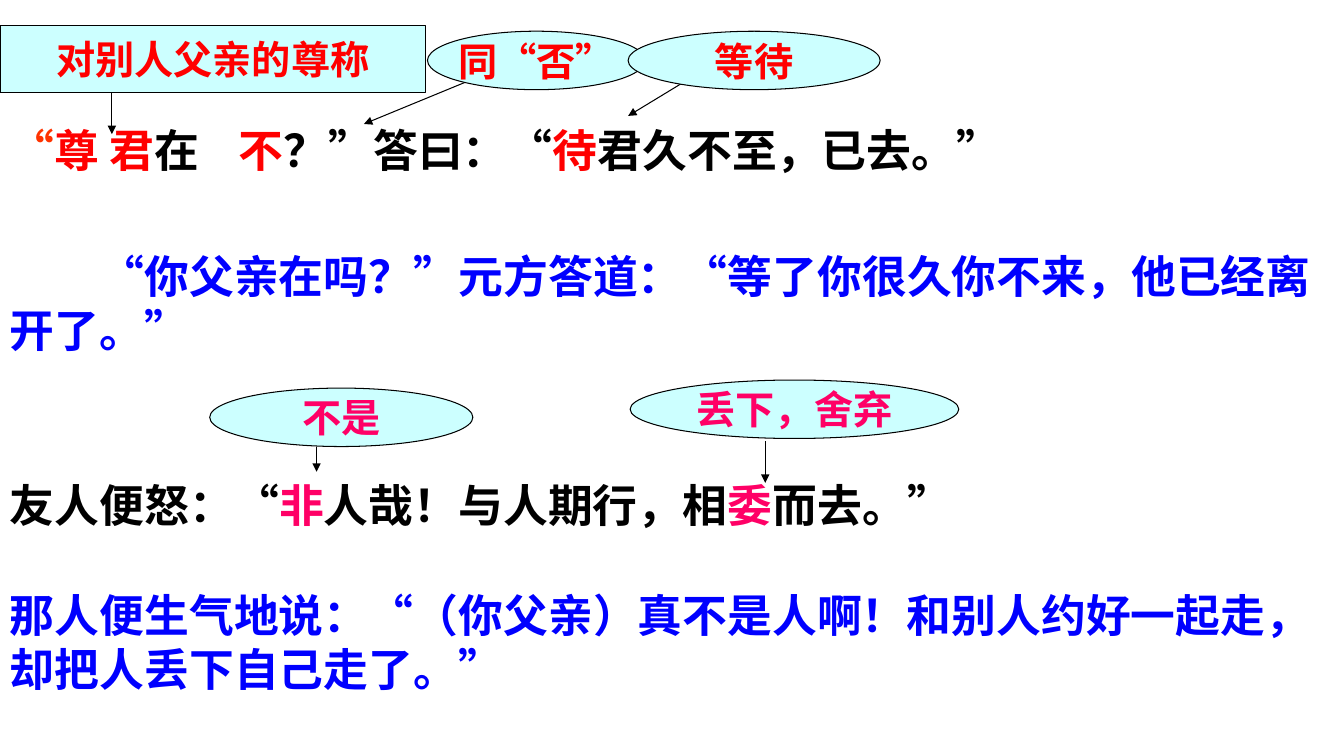
from lxml import etree
from pptx import Presentation
from pptx.dml.color import RGBColor
from pptx.enum.lang import MSO_LANGUAGE_ID
from pptx.enum.shapes import MSO_CONNECTOR, MSO_SHAPE
from pptx.enum.text import MSO_ANCHOR, PP_ALIGN
from pptx.oxml.ns import qn
from pptx.util import Inches, Pt

RECT, OVAL = MSO_SHAPE.RECTANGLE, MSO_SHAPE.OVAL
LINE = MSO_CONNECTOR.STRAIGHT
CENTER, MIDDLE = PP_ALIGN.CENTER, MSO_ANCHOR.MIDDLE
CHINESE = MSO_LANGUAGE_ID.SIMPLIFIED_CHINESE

SANS, SERIF = "Noto Sans CJK SC", "Times New Roman"
COLORS = {"black": "000000", "blue": "0000FF", "red": "FF0000",
          "orange": "FF3300", "pink": "FF0066", "pale": "CCFFFF"}


def color(name):
    return RGBColor.from_string(COLORS[name])


def add_runs(para, runs, size):
    """Add (text, colour) runs; curly quotes take the serif face."""
    for text, hue in runs:
        run = para.add_run()
        run.text = text
        font = run.font
        font.size, font.bold = Pt(size), True
        font.color.rgb = color(hue)
        font.language_id = CHINESE
        font.name = SERIF if text[-1] in "“”" else SANS
        east = etree.SubElement(run._r.get_or_add_rPr(), qn("a:ea"))
        east.set("typeface", SANS)


deck = Presentation()
deck.slide_width, deck.slide_height = Inches(13.33), Inches(7.5)
slide = deck.slides.add_slide(deck.slide_layouts[6])
shapes = slide.shapes

# Classical lines in black, modern renderings in blue
# top, width, height, first-line indent, tab stop, runs
passages = [
    (1.17, 13.33, 0.63, 0, 2.27, [
        ("“", "orange"), ("尊 君", "red"), ("在\t", "black"), ("不", "red"),
        ("？", "black"), ("”", "black"), ("答曰：", "black"), ("“", "black"),
        ("待", "red"), ("君久不至，已去。", "black"), ("”", "black")]),
    (4.69, 13.33, 0.63, 0, 0, [
        ("友人便怒：", "black"), ("“", "black"), ("非", "pink"),
        ("人哉！与人期行，相", "black"), ("委", "pink"),
        ("而去。", "black"), ("”", "black")]),
    (2.42, 13.33, 1.17, 0.89, 0, [
        ("“", "blue"), ("你父亲在吗？", "blue"), ("”", "blue"),
        ("元方答道：", "blue"), ("“", "blue"),
        ("等了你很久你不来，他已经离开了。", "blue"), ("”", "blue")]),
    (5.78, 12.89, 1.17, 0, 0, [
        ("那人便生气地说：", "blue"), ("“", "blue"),
        ("（你父亲）真不是人啊！和别人约好一起走，却把人丢下自己走了。", "blue"),
        ("”", "blue")]),
]
for top, width, height, indent, tab, runs in passages:
    box = shapes.add_textbox(0, Inches(top), Inches(width), Inches(height))
    box.text_frame.word_wrap = True
    para = box.text_frame.paragraphs[0]
    para.line_spacing = Pt(38.5)
    props = para._p.get_or_add_pPr()
    if indent:
        props.set("marL", "0")
        props.set("indent", str(Inches(indent)))
    if tab:
        stops = etree.SubElement(props, qn("a:tabLst"))
        etree.SubElement(stops, qn("a:tab"), pos=str(Inches(tab)), algn="l")
    add_runs(para, runs, 32)

# Word notes, each with an arrow to the word it explains
# preset, left, top, width, height, arrow start, arrow end, runs
notes = [
    (RECT, 0, 0.25, 4.22, 0.67, (1.11, 0.92), (1.11, 1.33),
     [("对别人父亲的尊称", "red")]),
    (OVAL, 4.24, 0.31, 2.16, 0.58, (4.63, 0.81), (3.61, 1.23),
     [("同“", "red"), ("否", "red"), ("”", "red")]),
    (OVAL, 6.23, 0.31, 2.5, 0.58, (6.79, 0.81), (6.23, 1.15),
     [("等待", "red")]),
    (OVAL, 2.08, 3.85, 2.61, 0.58, (3.14, 4.43), (3.14, 4.68),
     [("不是", "pink")]),
    (OVAL, 6.25, 3.77, 3.26, 0.58, (7.59, 4.38), (7.59, 4.79),
     [("丢下，舍弃", "pink")]),
]
for kind, left, top, width, height, start, end, runs in notes:
    arrow = shapes.add_connector(LINE, *map(Inches, start + end))
    arrow.line.color.rgb = color("black")
    arrow.line.width = Pt(0.75)
    etree.SubElement(arrow.line._get_or_add_ln(), qn("a:tailEnd"),
                     type="triangle")
    etree.SubElement(arrow._element.spPr, qn("a:effectLst"))

    note = shapes.add_shape(kind, *map(Inches, (left, top, width, height)))
    note.shadow.inherit = False
    note.fill.solid()
    note.fill.fore_color.rgb = color("pale")
    note.line.color.rgb = color("black")
    note.line.width = Pt(0.75)
    frame = note.text_frame
    frame.word_wrap = False
    frame.vertical_anchor = MIDDLE
    para = frame.paragraphs[0]
    para.alignment = CENTER
    add_runs(para, runs, 28)

deck.save("out.pptx")
